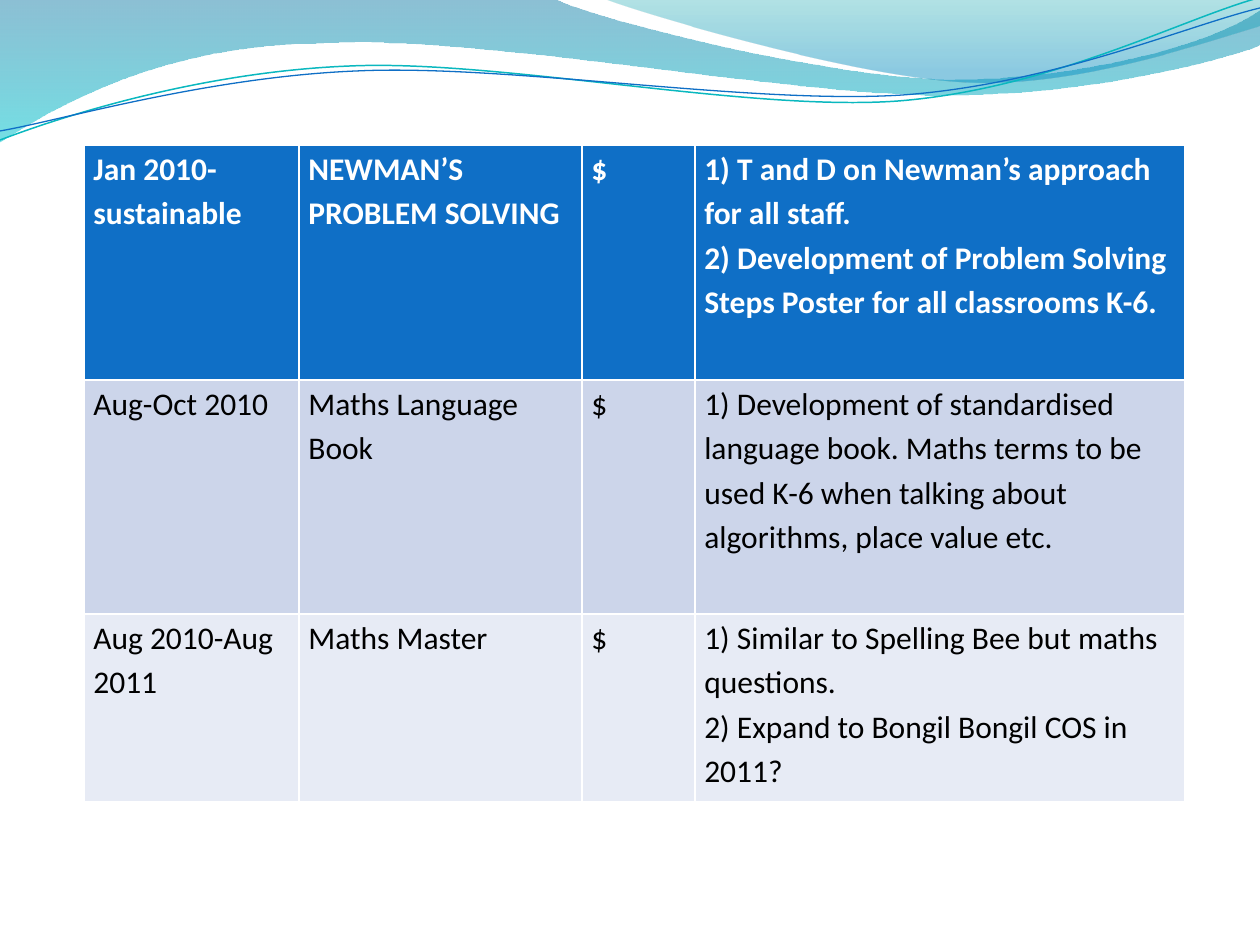
from pptx import Presentation
from pptx.dml.color import RGBColor
from pptx.enum.text import MSO_ANCHOR
from pptx.oxml.ns import qn
from pptx.util import Emu, Pt
from lxml.etree import SubElement

SLIDE_WIDTH, SLIDE_HEIGHT = 1260, 945
EMU_PER_PX = 9144000 / SLIDE_WIDTH

# Each wave is a start point followed by steps: 2 numbers for a line, 6 for a curve
BACK_WAVE = [(0, -1), (554, -1), (600, 21, 837, 79, 955, 79),
             (1075, 79, 1207, 47, 1260, 11), (1261, 45),
             (1239, 55, 1096, 96, 940, 95), (784, 95, 481, 35, 324, 43),
             (163, 44, 58, 105, -1, 142), (0, -1)]
FRONT_WAVE = [(604, -1), (641, 14, 859, 78, 969, 82),
              (1079, 87, 1211, 40, 1260, 26), (1260, 0), (604, -1)]
TEAL_LINE = [(0, 140), (60, 117, 199, 72, 349, 66),
             (498, 59, 747, 112, 898, 101), (1050, 89, 1182, 19, 1258, -2)]
BLUE_LINE = [(0, 131), (59, 121, 207, 77, 357, 71),
             (508, 64, 752, 105, 903, 95), (1053, 84, 1186, 26, 1260, 8)]

COLUMN_WIDTHS = [215, 283, 113, 490]
ROW_HEIGHTS = [235, 234, 188]
ROW_STYLES = [("0F6FC6", "FFFFFF", True), ("CCD5EA", "000000", False),
              ("E7EBF5", "000000", False)]
PLAN = [
    ["Jan 2010- sustainable", "NEWMAN’S PROBLEM SOLVING", "$",
     "1) T and D on Newman’s approach for all staff.\n"
     "2) Development of Problem Solving Steps Poster for all classrooms K-6."],
    ["Aug-Oct 2010", "Maths Language Book", "$",
     "1) Development of standardised language book. Maths terms to be used "
     "K-6 when talking about algorithms, place value etc."],
    ["Aug 2010-Aug 2011", "Maths Master", "$",
     "1) Similar to Spelling Bee but maths questions.\n"
     "2) Expand to Bongil Bongil COS in 2011?"],
]


def px(value):
    return Emu(round(value * EMU_PER_PX))


def color(hex_value):
    return RGBColor.from_string(hex_value)


def bend_segments(shape, steps):
    """Turn the three segments of every 6-number step into one cubic curve."""
    segments = iter(shape.element.xpath(".//a:path/a:lnTo"))
    for step in steps:
        first = next(segments)
        if len(step) == 6:
            first.tag = qn("a:cubicBezTo")
            for segment in (next(segments), next(segments)):
                first.append(segment[0])
                segment.getparent().remove(segment)


def add_outline(slide, left, top, outline, close):
    points = [(px(step[index]), px(step[index + 1]))
              for step in outline for index in range(0, len(step), 2)]
    builder = slide.shapes.build_freeform(*points[0], scale=1.0)
    builder.add_line_segments(points[1:], close=close)
    shape = builder.convert_to_shape(px(left), px(top))
    bend_segments(shape, outline[1:])
    shape.shadow.inherit = False
    return shape


def add_wave(slide, left, top, outline, stops):
    shape = add_outline(slide, left, top, outline, close=True)
    shape.line.fill.background()
    shape.fill.gradient()
    shape.fill.gradient_angle = 270
    for stop, (position, hex_value, _) in zip(shape.fill.gradient_stops, stops):
        stop.position = position
        stop.color.rgb = color(hex_value)
    # Transparency of the stops
    for node, (_, _, opacity) in zip(shape.element.xpath(".//a:gs/a:srgbClr"), stops):
        SubElement(node, qn("a:alpha")).set("val", str(opacity * 1000))


def add_wave_line(slide, left, top, outline, hex_value, width):
    shape = add_outline(slide, left, top, outline, close=False)
    shape.fill.background()
    shape.line.color.rgb = color(hex_value)
    shape.line.width = Pt(width)


def add_wave_header(slide, left, top):
    add_wave(slide, left, top, BACK_WAVE, [(0, "0074A1", 45), (1, "00C6CF", 55)])
    add_wave(slide, left, top, FRONT_WAVE, [(0, "00A1A9", 30), (0.8, "008BBF", 45)])
    add_wave_line(slide, left, top, TEAL_LINE, "0AB8BF", 0.85)
    add_wave_line(slide, left, top, BLUE_LINE, "0F6FC6", 0.75)


def format_cell(cell, text, fill, font_color, bold):
    cell.fill.solid()
    cell.fill.fore_color.rgb = color(fill)
    cell.margin_left = cell.margin_right = Pt(5.4)
    cell.margin_top = cell.margin_bottom = 0
    cell.vertical_anchor = MSO_ANCHOR.TOP
    cell.text_frame.text = text
    for paragraph in cell.text_frame.paragraphs:
        paragraph.line_spacing = 1.15
        for run in paragraph.runs:
            run.font.name = "Calibri"
            run.font.size = Pt(18)
            run.font.bold = bold
            run.font.color.rgb = color(font_color)


def add_plan_table(slide, left, top):
    # The default table style supplies the white rules
    table = slide.shapes.add_table(
        len(PLAN), len(COLUMN_WIDTHS), px(left), px(top),
        px(sum(COLUMN_WIDTHS)), px(sum(ROW_HEIGHTS))).table
    for column, width in zip(table.columns, COLUMN_WIDTHS):
        column.width = px(width)
    for row, height, texts, style in zip(table.rows, ROW_HEIGHTS, PLAN, ROW_STYLES):
        row.height = px(height)
        for cell, text in zip(row.cells, texts):
            format_cell(cell, text, *style)


def main():
    presentation = Presentation()
    presentation.slide_width = px(SLIDE_WIDTH)
    presentation.slide_height = px(SLIDE_HEIGHT)
    slide = presentation.slides.add_slide(presentation.slide_layouts[6])
    add_wave_header(slide, 0, 0)
    add_plan_table(slide, 84, 145)
    presentation.save("out.pptx")


if __name__ == "__main__":
    main()
